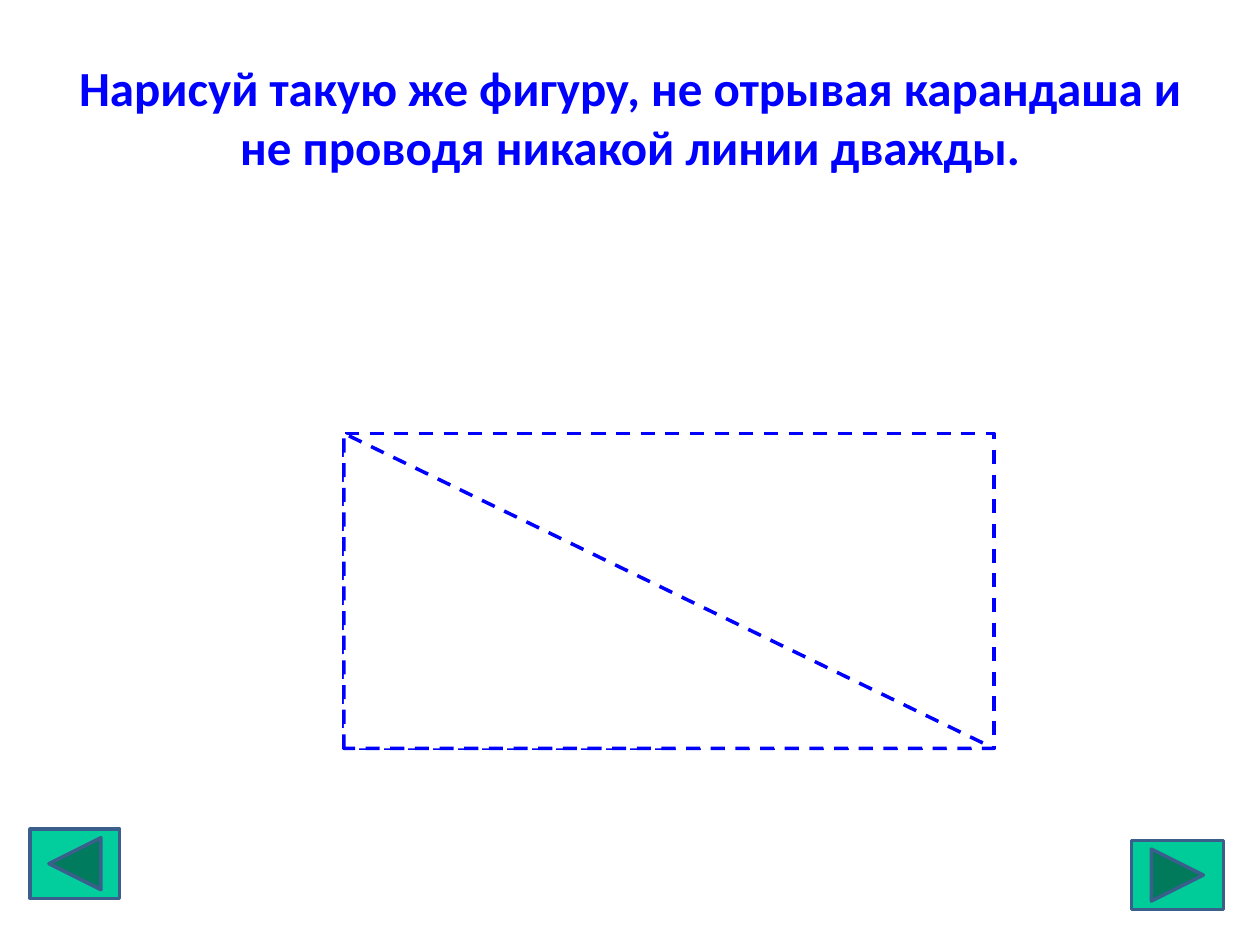
from pptx import Presentation
from pptx.dml.color import RGBColor
from pptx.enum.dml import MSO_LINE_DASH_STYLE as DASH
from pptx.enum.shapes import MSO_SHAPE as SHAPE
from pptx.enum.text import MSO_ANCHOR, PP_ALIGN
from pptx.util import Inches, Pt

TITLE = "Нарисуй такую же фигуру, не отрывая карандаша и не проводя никакой линии дважды."
TITLE_BOX = (0.5, 0.3, 9, 1.25)
BLUE, WHITE, BUTTON_LINE = "0000FF", "FFFFFF", "3A5F8C"

FIGURE_BOX = (2.73, 3.44, 5.16, 2.5)
FIGURE_PARTS = [SHAPE.RECTANGLE, SHAPE.RIGHT_TRIANGLE]
BUTTONS = [
    (SHAPE.ACTION_BUTTON_FORWARD_OR_NEXT, (8.98, 6.67, 0.73, 0.55), "00CC99"),
    (SHAPE.ACTION_BUTTON_BACK_OR_PREVIOUS, (0.24, 6.58, 0.71, 0.55), "02CE9D"),
]


def color(value):
    return RGBColor.from_string(value)


def add_outlined(slide, kind, box, fill, line, dash=None):
    shape = slide.shapes.add_shape(kind, *map(Inches, box))
    shape.shadow.inherit = False
    shape.fill.solid()
    shape.fill.fore_color.rgb = color(fill)
    shape.line.color.rgb = color(line)
    shape.line.width = Pt(2)
    if dash:
        shape.line.dash_style = dash


def add_title(slide):
    frame = slide.shapes.add_textbox(*map(Inches, TITLE_BOX)).text_frame
    frame.word_wrap = True
    frame.vertical_anchor = MSO_ANCHOR.MIDDLE
    paragraph = frame.paragraphs[0]
    paragraph.alignment = PP_ALIGN.CENTER
    run = paragraph.add_run()
    run.text = TITLE
    run.font.name = "Calibri"
    run.font.size = Pt(28)
    run.font.bold = True
    run.font.color.rgb = color(BLUE)


def main():
    presentation = Presentation()
    presentation.slide_width = Inches(10)
    presentation.slide_height = Inches(7.5)
    slide = presentation.slides.add_slide(presentation.slide_layouts[6])

    add_title(slide)
    # Rectangle with its diagonal
    for kind in FIGURE_PARTS:
        add_outlined(slide, kind, FIGURE_BOX, WHITE, BLUE, DASH.DASH)
    # Navigation buttons
    for kind, box, fill in BUTTONS:
        add_outlined(slide, kind, box, fill, BUTTON_LINE)

    presentation.save("out.pptx")


if __name__ == "__main__":
    main()
